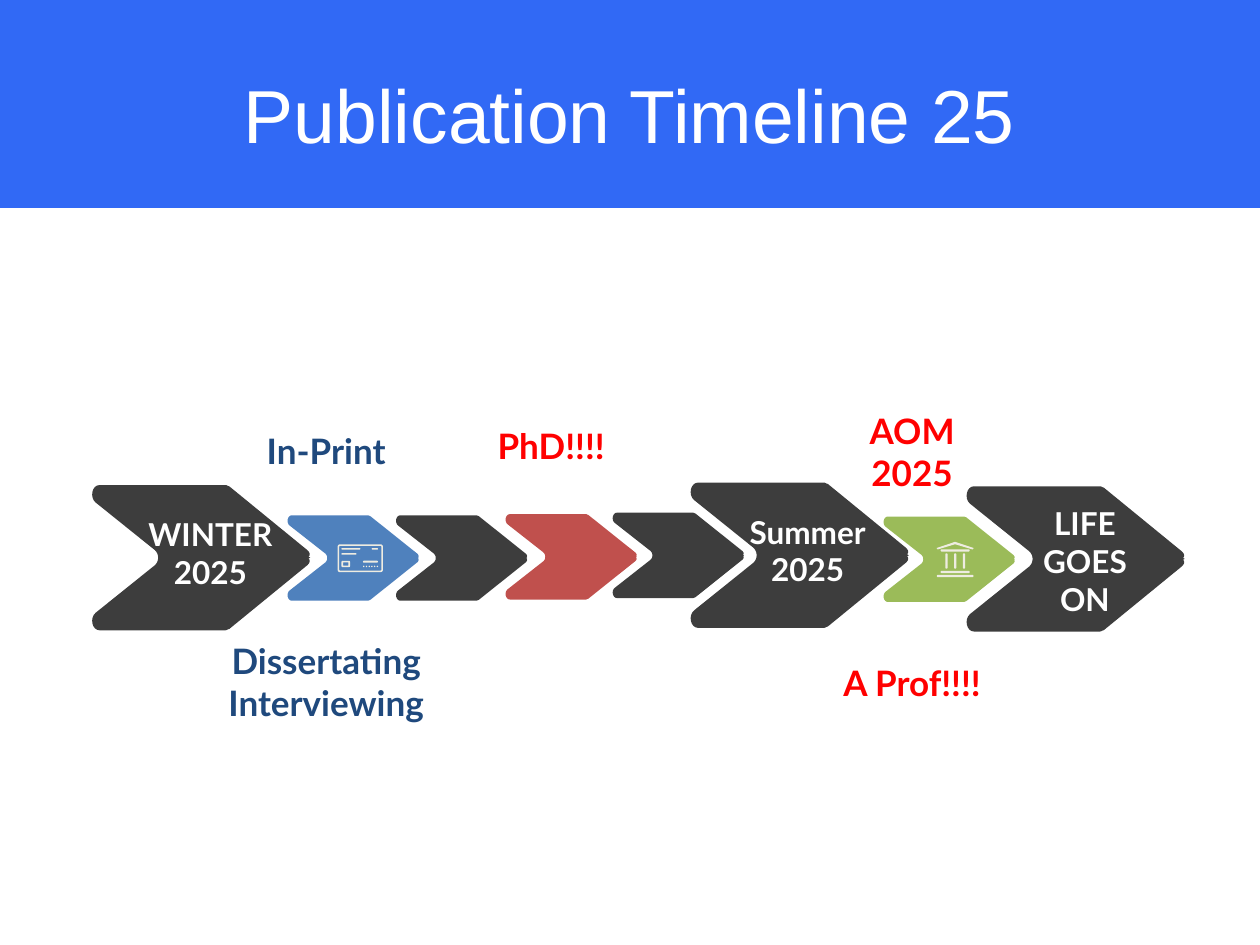
from lxml import etree
from pptx import Presentation
from pptx.dml.color import RGBColor
from pptx.enum.shapes import MSO_SHAPE as Shape
from pptx.enum.text import PP_ALIGN as Align
from pptx.oxml.ns import qn
from pptx.util import Pt

BLUE = RGBColor(0x31, 0x69, 0xF5)
BLACK = RGBColor(0, 0, 0)
WHITE = RGBColor(0xFF, 0xFF, 0xFF)
RED = RGBColor(0xFF, 0, 0)
NAVY = RGBColor(0x1F, 0x49, 0x7D)
STEEL = RGBColor(0x4F, 0x81, 0xBD)
BRICK = RGBColor(0xC0, 0x50, 0x4D)
GREEN = RGBColor(0x9B, 0xBB, 0x59)
CREAM = RGBColor(0xEE, 0xEC, 0xE1)

BIG, SMALL = (126.7, 83), (76.3, 48.8)


def curve(a, b, c, d, steps=8):
    """Points along a cubic Bezier curve."""
    points = []
    for i in range(steps + 1):
        t = i / steps
        u = 1 - t
        points.append(tuple(u**3 * a[k] + 3 * u * u * t * b[k] + 3 * u * t * t * c[k]
                            + t**3 * d[k] for k in (0, 1)))
    return points


def chevron_outline():
    """Rounded chevron in a unit box: the upper half and its mirror image."""
    upper = (curve((173, 58), (176, 56), (175, 54), (173, 52))
             + curve((111, 1), (110, 1), (109, 0), (108, 0))
             + curve((8, 0), (2, 0), (0, 10), (5, 14))
             + curve((52, 52), (54, 54), (54.5, 56), (54.5, 58)))
    upper[0] = (175.3, 58)
    lower = [(x, 116 - y) for x, y in reversed(upper)]
    return [(x / 176, y / 116) for x, y in upper + lower]


class Deck:
    font, size = "Lato", 20

    def __init__(self, width, height):
        self.prs = Presentation()
        self.prs.slide_width, self.prs.slide_height = Pt(width), Pt(height)
        self.s = self.prs.slides.add_slide(self.prs.slide_layouts[6])

    def paint(self, sp, color, alpha=None):
        sp.shadow.inherit = False
        sp.fill.solid()
        sp.fill.fore_color.rgb = color
        sp.line.fill.background()
        if alpha:
            clr = sp.fill._xPr.find(qn("a:solidFill"))[0]
            etree.SubElement(clr, qn("a:alpha")).set("val", str(alpha * 1000))
        return sp

    def shape(self, kind, box, color):
        return self.paint(self.s.shapes.add_shape(kind, *map(Pt, box)), color)

    def frame(self, box, color, weight):
        sp = self.shape(Shape.ROUNDED_RECTANGLE, box, color)
        sp.adjustments[0] = 0.06
        sp.fill.background()
        sp.line.color.rgb = color
        sp.line.width = Pt(weight)

    def bars(self, boxes, color):
        for box in boxes:
            self.shape(Shape.ROUNDED_RECTANGLE, box, color).adjustments[0] = 0.5

    def outline(self, points, color, alpha=None):
        points = [(Pt(x), Pt(y)) for x, y in points]
        fb = self.s.shapes.build_freeform(*points[0])
        fb.add_line_segments(points[1:], close=True)
        self.paint(fb.convert_to_shape(), color, alpha)

    def chevron(self, left, top, size, color=None):
        w, h = size
        points = [(left + x * w, top + y * h) for x, y in chevron_outline()]
        self.outline(points, color or BLACK, None if color else 76)

    def text(self, box, text, color, size=None, font=None, bold=True, gap_at=None, inset=3.6):
        """Centred text; gap_at is the paragraph that has four lines of space above."""
        size = size or self.size
        tf = self.s.shapes.add_textbox(*map(Pt, box)).text_frame
        tf.word_wrap = True
        tf.margin_top = Pt(inset)
        tf.text = text
        for i, p in enumerate(tf.paragraphs):
            p.alignment = Align.CENTER
            if i == gap_at:
                p.space_before = Pt(4 * 1.2 * size)
            for r in p.runs:
                r.font.name, r.font.size, r.font.bold = font or self.font, Pt(size), bold
                r.font.color.rgb = color


def main():
    deck = Deck(720, 540)

    # Title band
    band = deck.shape(Shape.RECTANGLE, (0, 0, 720, 118.8), BLUE)
    band.line.color.rgb = BLUE
    band.line.width = Pt(0.75)
    deck.text((32.4, 31.7, 654.5, 90), "Publication Timeline 25", WHITE,
              42.9, "Arial", False, inset=7.2)

    # Chevrons, left to right
    for left, top, size, color in [
        (51.1, 277.2, BIG, None), (163.4, 294.5, SMALL, STEEL),
        (225.4, 294.5, SMALL, None), (288, 293.8, SMALL, BRICK),
        (349.2, 293, SMALL, None), (393.1, 275.8, BIG, None),
        (504, 295.2, SMALL, GREEN), (550.8, 277.9, BIG, None),
    ]:
        deck.chevron(left, top, size, color)

    # Card icon
    deck.frame((193.4, 311.5, 25, 15), CREAM, 0.9)
    deck.frame((195.6, 320.9, 4, 2.7), CREAM, 0.9)
    deck.bars([(195.1, 313.2, 10.8, 0.9), (195.1, 316.1, 8.6, 0.9),
               (212.4, 313.2, 3.6, 0.9), (207.4, 320.4, 8.6, 1.1)], CREAM)
    for i in range(6):
        deck.shape(Shape.OVAL, (207.5 + 1.55 * i, 323.3, 0.8, 0.8), CREAM)

    # Bank icon
    deck.outline([(535.2, 313.2), (545.8, 309.6), (556.4, 313.2), (555.8, 314),
                  (545.8, 311), (535.8, 314)], CREAM)
    deck.bars([(537.5, 313.9, 16.6, 1.3), (537.5, 326.2, 16.6, 1.3),
               (535.3, 328.5, 21, 1.3)], CREAM)
    deck.bars([(540.2 + 5 * i, 316.2, 1.3, 8.8) for i in range(3)], CREAM)

    # Season labels
    deck.text((74.9, 290.9, 90.7, 51), "WINTER\n2025", WHITE, 18)
    deck.text((411.8, 289.4, 99.4, 51), "Summer\n2025", WHITE, 18)
    deck.text((574.6, 284.4, 90.7, 72.7), "LIFE GOES ON", WHITE, 18)

    # Milestones above and below
    deck.text((254.9, 239, 120.2, 55.4), "PhD!!!!", RED)
    deck.text((455, 230.4, 132.5, 177.1), "AOM\v2025\nA Prof!!!!", RED, gap_at=1)
    deck.text((120.2, 241.9, 132.5, 225.4), "In-Print\nDissertating\nInterviewing", NAVY, gap_at=1)

    deck.prs.save("out.pptx")


if __name__ == "__main__":
    main()
